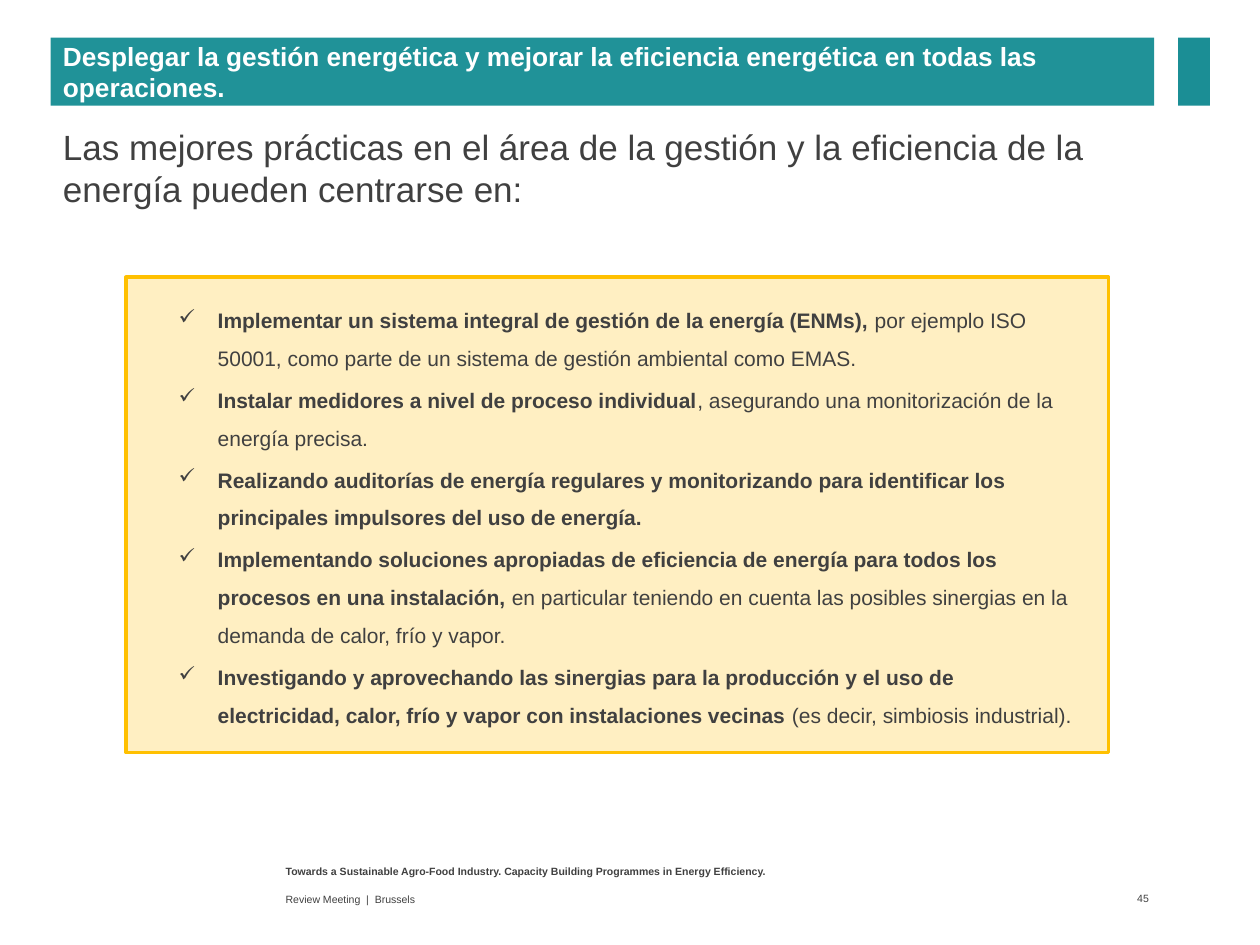
from dataclasses import dataclass

from lxml import etree
from pptx import Presentation
from pptx.dml.color import RGBColor
from pptx.enum.shapes import MSO_SHAPE
from pptx.enum.text import MSO_ANCHOR, PP_ALIGN
from pptx.oxml.ns import qn
from pptx.shapes.autoshape import Shape
from pptx.slide import Slide
from pptx.util import Cm, Pt

RECTANGLE = MSO_SHAPE.RECTANGLE
TOP, MIDDLE = MSO_ANCHOR.TOP, MSO_ANCHOR.MIDDLE
LEFT, RIGHT = PP_ALIGN.LEFT, PP_ALIGN.RIGHT

TEAL = RGBColor(0x20, 0x92, 0x98)
DARK_TEAL = RGBColor(0x1B, 0x8E, 0x95)
AMBER = RGBColor(0xFF, 0xC0, 0x00)
GRAY = RGBColor(0x40, 0x40, 0x40)
WHITE = RGBColor(0xFF, 0xFF, 0xFF)

BULLET_INDENT = Cm(0.79)


@dataclass(frozen=True)
class Box:
    left: float
    top: float
    width: float
    height: float

    def lengths(self) -> list[Cm]:
        return [Cm(value) for value in (self.left, self.top, self.width, self.height)]


@dataclass(frozen=True)
class Label:
    box: Box
    text: str
    size: float
    bold: bool = False
    anchor: MSO_ANCHOR = MIDDLE
    align: PP_ALIGN = LEFT
    color: RGBColor = GRAY
    fill: RGBColor | None = None
    margin_right: float = 0.25


@dataclass(frozen=True)
class Practice:
    key: str
    detail: str = ""


LABELS = [
    # Footer
    Label(Box(5.51, 17.32, 13.97, 0.53),
          "Towards a Sustainable Agro-Food Industry. "
          "Capacity Building Programmes in Energy Efficiency.",
          6, bold=True, anchor=TOP),
    Label(Box(5.51, 17.88, 13.97, 0.48), "Review Meeting  |  Brussels", 6),
    Label(Box(21.84, 17.86, 1.42, 0.51), "45", 6, align=RIGHT, margin_right=0.1),
    # Introduction
    Label(Box(1.02, 2.87, 23.34, 1.02),
          "Las mejores prácticas en el área de la gestión y la eficiencia "
          "de la energía pueden centrarse en:", 20),
    # Title bar
    Label(Box(1.02, 0.76, 22.25, 1.37),
          "Desplegar la gestión energética y mejorar la eficiencia energética "
          "en todas las operaciones.",
          15, bold=True, color=WHITE, fill=TEAL),
]

PRACTICES = [
    Practice("Implementar un sistema integral de gestión de la energía (ENMs), ",
             "por ejemplo ISO 50001, como parte de un sistema de gestión "
             "ambiental como EMAS."),
    Practice("Instalar medidores a nivel de proceso individual",
             ", asegurando una monitorización de la energía precisa."),
    Practice("Realizando auditorías de energía regulares y monitorizando para "
             "identificar los principales impulsores del uso de energía."),
    Practice("Implementando soluciones apropiadas de eficiencia de energía para "
             "todos los procesos en una instalación,",
             " en particular teniendo en cuenta las posibles sinergias en la "
             "demanda de calor, frío y vapor."),
    Practice("Investigando y aprovechando las sinergias para la producción y el "
             "uso de electricidad, calor, frío y vapor con instalaciones vecinas ",
             "(es decir, simbiosis industrial)."),
]


def add_run(paragraph, text: str, size: float, bold: bool, color: RGBColor) -> None:
    run = paragraph.add_run()
    run.text = text
    formats = {"name": "Arial", "size": Pt(size), "bold": bold}
    for name, value in formats.items():
        setattr(run.font, name, value)
    run.font.color.rgb = color


def add_rectangle(slide: Slide, box: Box, fill: RGBColor) -> Shape:
    shape = slide.shapes.add_shape(RECTANGLE, *box.lengths())
    shape.shadow.inherit = False
    shape.fill.solid()
    shape.fill.fore_color.rgb = fill
    shape.line.fill.background()
    return shape


def add_label(slide: Slide, label: Label) -> None:
    if label.fill is None:
        shape = slide.shapes.add_textbox(*label.box.lengths())
    else:
        shape = add_rectangle(slide, label.box, label.fill)
    formats = {"word_wrap": True, "vertical_anchor": label.anchor,
               "margin_right": Cm(label.margin_right)}
    for name, value in formats.items():
        setattr(shape.text_frame, name, value)
    paragraph = shape.text_frame.paragraphs[0]
    paragraph.alignment = label.align
    add_run(paragraph, label.text, label.size, label.bold, label.color)


def add_panel(slide: Slide, box: Box) -> None:
    panel = add_rectangle(slide, box, AMBER)
    panel.line.color.rgb = AMBER
    panel.line.width = Pt(2)
    # Fill opacity of 24 %
    fill_color = panel.fill._xPr.find(qn("a:solidFill")).find(qn("a:srgbClr"))
    etree.SubElement(fill_color, qn("a:alpha"), val="24000")


def add_check_bullet(paragraph) -> None:
    properties = paragraph._p.get_or_add_pPr()
    properties.set("marL", str(BULLET_INDENT))
    properties.set("indent", str(-BULLET_INDENT))
    etree.SubElement(properties, qn("a:buChar"), char="✓")


def add_practices(slide: Slide, box: Box, practices: list[Practice]) -> None:
    frame = slide.shapes.add_textbox(*box.lengths()).text_frame
    frame.word_wrap = True
    for index, practice in enumerate(practices):
        paragraph = frame.add_paragraph() if index else frame.paragraphs[0]
        add_check_bullet(paragraph)
        paragraph.line_spacing = 1.5
        paragraph.space_before = Pt(2.4 if index else 0)
        add_run(paragraph, practice.key, 12, True, GRAY)
        if practice.detail:
            add_run(paragraph, practice.detail, 12, False, GRAY)


def main() -> None:
    presentation = Presentation()
    presentation.slide_width = Cm(25.4)
    presentation.slide_height = Cm(19.05)
    slide = presentation.slides.add_slide(presentation.slide_layouts[6])

    # Footer, introduction and title bar
    for label in LABELS:
        add_label(slide, label)
    add_rectangle(slide, Box(23.75, 0.76, 0.64, 1.37), DARK_TEAL)

    # Panel of best practices
    add_panel(slide, Box(2.54, 5.59, 19.81, 9.58))
    add_practices(slide, Box(3.35, 5.82, 18.72, 9.04), PRACTICES)

    presentation.save("out.pptx")


if __name__ == "__main__":
    main()
